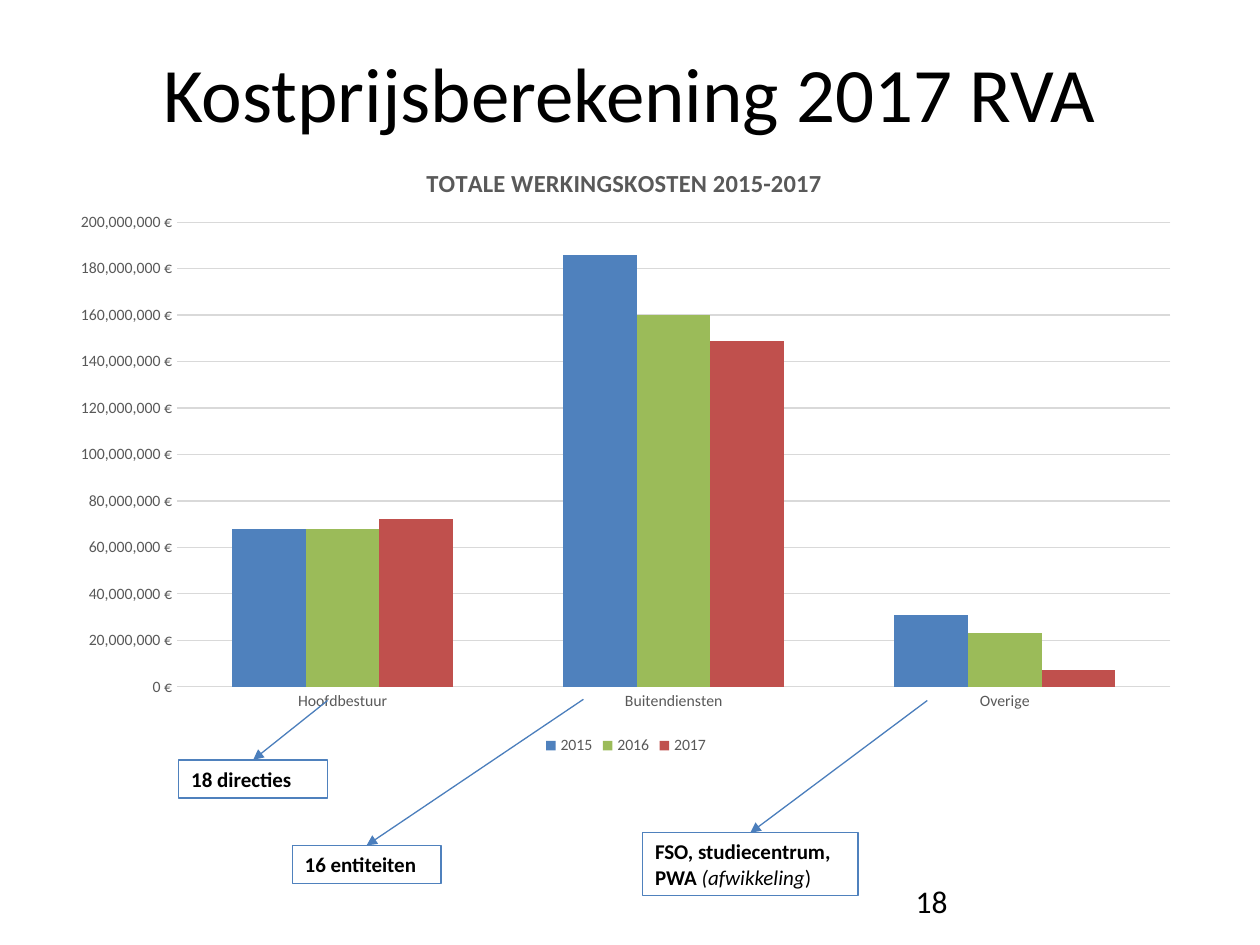
from lxml import etree
from pptx import Presentation
from pptx.chart.data import CategoryChartData
from pptx.dml.color import RGBColor
from pptx.enum.chart import XL_CHART_TYPE, XL_LEGEND_POSITION, XL_TICK_MARK
from pptx.enum.shapes import MSO_CONNECTOR, MSO_SHAPE
from pptx.enum.text import MSO_ANCHOR, PP_ALIGN
from pptx.oxml.ns import qn
from pptx.util import Pt

COLUMN = XL_CHART_TYPE.COLUMN_CLUSTERED
BOTTOM = XL_LEGEND_POSITION.BOTTOM
NO_TICK = XL_TICK_MARK.NONE
STRAIGHT = MSO_CONNECTOR.STRAIGHT
RECT = MSO_SHAPE.RECTANGLE
MIDDLE, TOP = MSO_ANCHOR.MIDDLE, MSO_ANCHOR.TOP
LEFT, CENTER = PP_ALIGN.LEFT, PP_ALIGN.CENTER

FONT = "Calibri"
HEX = {"text": "000000", "grey": "595959", "grid": "D9D9D9",
       "edge": "4F81BD", "arrow": "4B7EBC"}

TITLE = "Kostprijsberekening 2017 RVA"
NUMBER = "18"
HEAD = "TOTALE WERKINGSKOSTEN 2015-2017"
GROUPS = ["Hoofdbestuur", "Buitendiensten", "Overige"]
SERIES = [  # year, colour, values in millions of euros
    ("2015", "4F81BD", (68, 186, 31)),
    ("2016", "9BBB59", (68, 160, 23)),
    ("2017", "C0504D", (72, 149, 7)),
]
# box (left, top, width, height), arrow start, runs (text, bold, italic)
NOTES = [
    ((102.2, 434.2, 85, 21.8), (187.2, 400.3),
     [("18 directies", True, False)]),
    ((167, 483.1, 85, 21.8), (333.4, 399.6),
     [("16 entiteiten", True, False)]),
    ((367.2, 475.9, 123.1, 36), (529.9, 400.3),
     [("FSO, studiecentrum, PWA ", True, False),
      ("(afwikkeling", False, True), (")", False, False)]),
]


def rgb(name):
    return RGBColor.from_string(HEX.get(name, name))


def style(font, size, color="text", bold=False, italic=False):
    font.name, font.size = FONT, Pt(size)
    font.bold, font.italic = bold, italic
    font.color.rgb = rgb(color)


def write(shape, runs, size, align=LEFT, anchor=TOP):
    frame = shape.text_frame
    frame.word_wrap, frame.vertical_anchor = True, anchor
    para = frame.paragraphs[0]
    para.alignment = align
    for text, bold, italic in runs:
        run = para.add_run()
        run.text = text
        style(run.font, size, bold=bold, italic=italic)


def place(node, index, **parts):
    """Give a chart part a manual layout, as shares of the chart's size."""
    for old in node.findall(qn("c:layout")):
        node.remove(old)
    layout = etree.Element(qn("c:layout"))
    node.insert(index, layout)
    manual = etree.SubElement(layout, qn("c:manualLayout"))
    if "w" in parts:
        etree.SubElement(manual, qn("c:layoutTarget"), val="inner")
    for key in ("x", "y"):
        etree.SubElement(manual, qn(f"c:{key}Mode"), val="edge")
    for key, share in parts.items():
        etree.SubElement(manual, qn(f"c:{key}"), val=str(share))


def add_costs(shapes):
    data = CategoryChartData(number_format='#,##0\\ "€"')
    data.categories = GROUPS
    for year, _, costs in SERIES:
        data.add_series(year, [cost * 1_000_000 for cost in costs])
    box = map(Pt, (33.8, 77.8, 648, 356.4))
    chart = shapes.add_chart(COLUMN, *box, data).chart
    style(chart.font, 10)

    chart.has_title = True
    run = chart.chart_title.text_frame.paragraphs[0].add_run()
    run.text = HEAD
    style(run.font, 14, "grey", bold=True)
    place(chart.chart_title.element, 1, x=0.32, y=0.04)
    place(chart.element.chart.plotArea, 0, x=0.104, y=0.138, w=0.876, h=0.745)

    chart.has_legend = True
    chart.legend.position = BOTTOM
    chart.legend.include_in_layout = False
    style(chart.legend.font, 9, "grey")

    for axis in (chart.category_axis, chart.value_axis):
        axis.major_tick_mark = axis.minor_tick_mark = NO_TICK
        axis.format.line.fill.background()
        style(axis.tick_labels.font, 9, "grey")
    axis = chart.value_axis
    axis.minimum_scale, axis.maximum_scale = 0, 200_000_000
    axis.major_unit = 20_000_000
    grid = axis.major_gridlines.format.line
    grid.color.rgb, grid.width = rgb("grid"), Pt(0.75)

    plot = chart.plots[0]
    plot.gap_width, plot.overlap, plot.vary_by_categories = 150, 0, False
    for bars, (_, color, _) in zip(plot.series, SERIES):
        bars.format.fill.solid()
        bars.format.fill.fore_color.rgb = rgb(color)


def add_note(shapes, box, start, runs):
    note = shapes.add_shape(RECT, *map(Pt, box))
    note.shadow.inherit = False
    note.fill.background()
    note.line.color.rgb, note.line.width = rgb("edge"), Pt(0.75)
    write(note, runs, 12)

    x, y = map(Pt, start)
    arrow = shapes.add_connector(STRAIGHT, x, y, x, y)
    arrow.end_connect(note, 0)
    arrow.line.color.rgb, arrow.line.width = rgb("arrow"), Pt(0.75)
    etree.SubElement(arrow.line._get_or_add_ln(), qn("a:tailEnd"),
                     type="triangle")
    etree.SubElement(arrow.element.spPr, qn("a:effectLst"))


def main():
    deck = Presentation()
    deck.slide_width, deck.slide_height = Pt(720), Pt(540)
    shapes = deck.slides.add_slide(deck.slide_layouts[6]).shapes

    title = shapes.add_textbox(*map(Pt, (36, 21.6, 648, 61.2)))
    write(title, [(TITLE, False, False)], 44, CENTER, MIDDLE)
    add_costs(shapes)
    for note in NOTES:
        add_note(shapes, *note)
    number = shapes.add_textbox(*map(Pt, (516.2, 500.4, 167.8, 28.8)))
    write(number, [(NUMBER, False, False)], 18, anchor=MIDDLE)
    deck.save("out.pptx")


if __name__ == "__main__":
    main()
